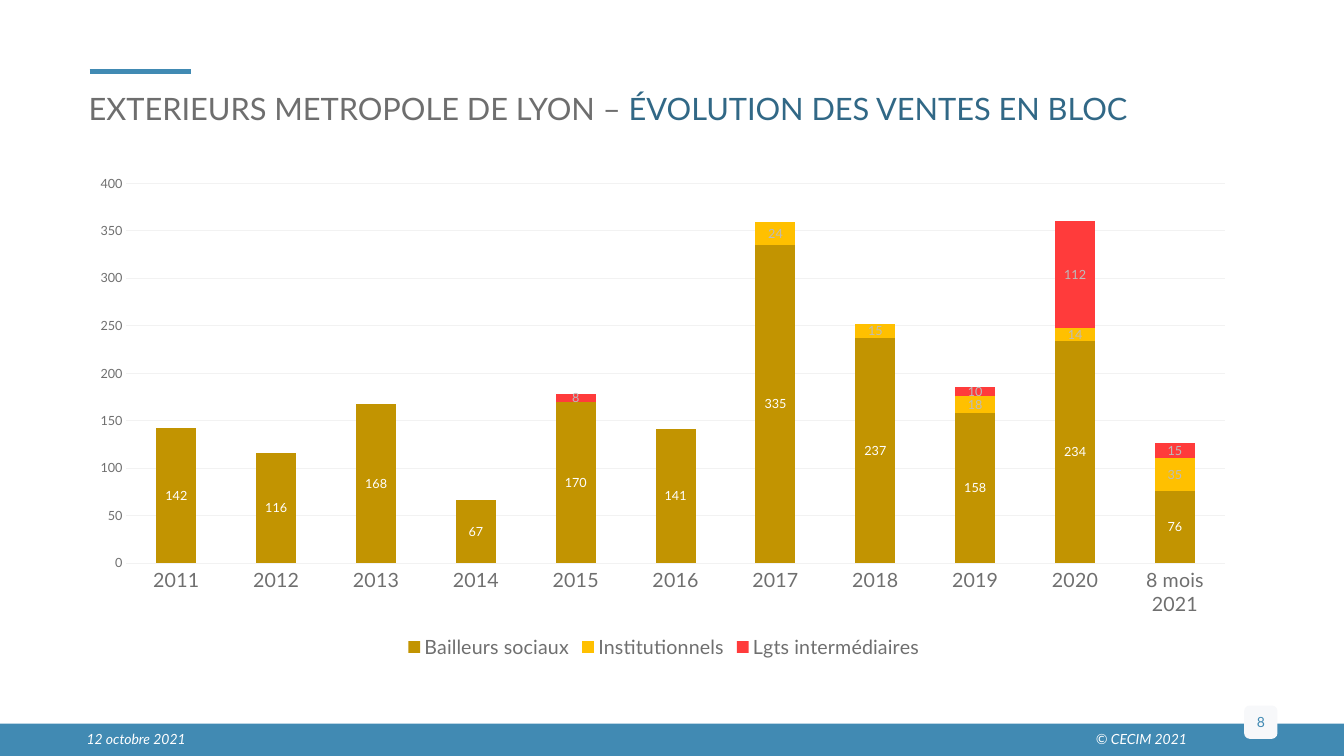
from lxml import etree
from pptx import Presentation
from pptx.chart.data import CategoryChartData
from pptx.dml.color import RGBColor
from pptx.enum.chart import XL_CHART_TYPE, XL_LEGEND_POSITION, XL_TICK_MARK
from pptx.enum.shapes import MSO_CONNECTOR, MSO_SHAPE
from pptx.enum.text import MSO_ANCHOR, MSO_AUTO_SIZE, PP_ALIGN
from pptx.oxml import parse_xml
from pptx.oxml.ns import nsdecls, qn
from pptx.util import Inches, Pt

STACKED = XL_CHART_TYPE.COLUMN_STACKED
BOTTOM = XL_LEGEND_POSITION.BOTTOM
NO_TICK = XL_TICK_MARK.NONE
STRAIGHT = MSO_CONNECTOR.STRAIGHT
RECT, ROUND = MSO_SHAPE.RECTANGLE, MSO_SHAPE.ROUNDED_RECTANGLE
MIDDLE = MSO_ANCHOR.MIDDLE
GROW = MSO_AUTO_SIZE.SHAPE_TO_FIT_TEXT
LEFT, CENTER, RIGHT = PP_ALIGN.LEFT, PP_ALIGN.CENTER, PP_ALIGN.RIGHT

BLUE, DARK_BLUE, WHITE = "418AB3", "316886", "FFFFFF"
GRAY, GRID, LABEL = "6F6F6F", "F2F2F2", "BCBCBC"
YEARS = [str(year) for year in range(2011, 2021)] + ["8 mois\n2021"]
SALES = [
    ("Bailleurs sociaux", "C29401", WHITE,
     [142, 116, 168, 67, 170, 141, 335, 237, 158, 234, 76]),
    ("Institutionnels", "FFC000", LABEL,
     [0, 0, 0, 0, 0, 0, 24, 15, 18, 14, 35]),
    ("Lgts intermédiaires", "FF3B3B", LABEL,
     [0, 0, 0, 0, 8, 0, 0, 0, 10, 112, 15]),
]
PLOT_LAYOUT = {"x": 0.04, "y": 0.04, "w": 0.94, "h": 0.76}


def rgb(color):
    """Turn a hex string into a colour."""
    return RGBColor.from_string(color)


class SlideBuilder:
    """Holds the style and the current slide."""

    def __init__(self, prs, font="Lato"):
        """Add a title-only slide."""
        self.font = font
        self.s = prs.slides.add_slide(prs.slide_layouts[5])

    def style(self, font, size, color, **formats):
        """Format a font."""
        values = {"name": self.font, "size": Pt(size), "bold": False, **formats}
        for name, value in values.items():
            setattr(font, name, value)
        font.color.rgb = rgb(color)

    def title(self, box, runs):
        """Fill the title placeholder with coloured runs."""
        sp = self.s.shapes.title
        sp.left, sp.top, sp.width, sp.height = map(Inches, box)
        tf = sp.text_frame
        tf.vertical_anchor = MIDDLE
        p = tf.paragraphs[0]
        p.alignment = LEFT
        for text, color in runs:
            r = p.add_run()
            r.text = text
            self.style(r.font, 22, color)

    def shape(self, kind, box, fill):
        """Add a plain filled shape."""
        sp = self.s.shapes.add_shape(kind, *map(Inches, box))
        sp.shadow.inherit = False
        sp.fill.solid()
        sp.fill.fore_color.rgb = rgb(fill)
        sp.line.fill.background()
        return sp

    def badge(self, box, text):
        """Add the rounded page number."""
        tf = self.shape(ROUND, box, "F7F8FA").text_frame
        tf.margin_left = tf.margin_right = 0
        tf.vertical_anchor = MIDDLE
        self.small_text(tf, text, BLUE, CENTER)

    def small_text(self, tf, text, color, align, **formats):
        """Fill a frame with one small paragraph."""
        p = tf.paragraphs[0]
        p.alignment = align
        r = p.add_run()
        r.text = text
        self.style(r.font, 10, color, **formats)

    def footer(self, box, text, align):
        """Add an italic footer text."""
        tf = self.s.shapes.add_textbox(*map(Inches, box)).text_frame
        tf.word_wrap = True
        tf.auto_size = GROW
        self.small_text(tf, text, WHITE, align, italic=True)

    def line(self, start, end, color, width):
        """Add a straight line."""
        cxn = self.s.shapes.add_connector(STRAIGHT, *map(Inches, start + end))
        cxn.line.color.rgb = rgb(color)
        cxn.line.width = Pt(width)
        etree.SubElement(cxn._element.spPr, qn("a:effectLst"))

    def chart(self, box, categories, series):
        """Add the stacked column chart."""
        data = CategoryChartData(number_format="#,##0")
        data.categories = categories
        for name, _, _, values in series:
            data.add_series(name, values)
        chart = self.s.shapes.add_chart(STACKED, *map(Inches, box), data).chart
        self.style(chart.font, 10, "A5A5A5")
        chart.has_title = False
        chart.has_legend = True
        chart.legend.position = BOTTOM
        chart.legend.include_in_layout = False
        self.style(chart.legend.font, 14, GRAY)
        self.axes(chart)
        plot = chart.plots[0]
        plot.gap_width, plot.overlap = 150, 100
        plot.vary_by_categories = False
        for ser, (_, fill, label, _) in zip(plot.series, series):
            ser.format.fill.solid()
            ser.format.fill.fore_color.rgb = rgb(fill)
            labels = ser.data_labels
            labels.show_value = True
            labels.number_format = "#,##0;;"
            labels.number_format_is_linked = False
            self.style(labels.font, 9, label)
        self.place_plot(chart)

    def axes(self, chart):
        """Format both axes and the grid."""
        cat, val = chart.category_axis, chart.value_axis
        for axis, size in ((cat, 14), (val, 9)):
            axis.major_tick_mark = axis.minor_tick_mark = NO_TICK
            self.style(axis.tick_labels.font, size, GRAY)
        val.minimum_scale, val.maximum_scale, val.major_unit = 0, 400, 50
        val.format.line.fill.background()
        for line in (cat.format.line, val.major_gridlines.format.line):
            line.color.rgb = rgb(GRID)
            line.width = Pt(0.75)

    def place_plot(self, chart):
        """Fix the inner plot area."""
        area = chart._chartSpace.chart.plotArea
        for old in area.findall(qn("c:layout")):
            area.remove(old)
        modes = '<c:xMode val="edge"/><c:yMode val="edge"/>'
        sizes = "".join(f'<c:{k} val="{v}"/>' for k, v in PLOT_LAYOUT.items())
        area.insert(0, parse_xml(
            f'<c:layout {nsdecls("c")}><c:manualLayout>'
            f'<c:layoutTarget val="inner"/>{modes}{sizes}'
            '</c:manualLayout></c:layout>'))


def main():
    """Build and save the slide."""
    prs = Presentation()
    prs.slide_width, prs.slide_height = Inches(13.33), Inches(7.5)
    b = SlideBuilder(prs)
    b.shape(RECT, (0, 7.18, 13.33, 0.32), BLUE)
    b.line((0.89, 0.71), (1.89, 0.71), BLUE, 3.5)
    b.badge((12.34, 7, 0.33, 0.33), "8")
    b.footer((6.09, 7.2, 5.78, 0.27), "© CECIM 2021", RIGHT)
    b.title((0.78, 0.45, 12.19, 1.25), [
        ("EXTERIEURS METROPOLE DE LYON – ", "6E6E6E"),
        ("ÉVOLUTION DES VENTES EN BLOC", DARK_BLUE)])
    b.chart((0.79, 1.62, 11.59, 4.96), YEARS, SALES)
    b.footer((0.76, 7.2, 3.11, 0.27), "12 octobre 2021", LEFT)
    prs.save("out.pptx")


if __name__ == "__main__":
    main()
